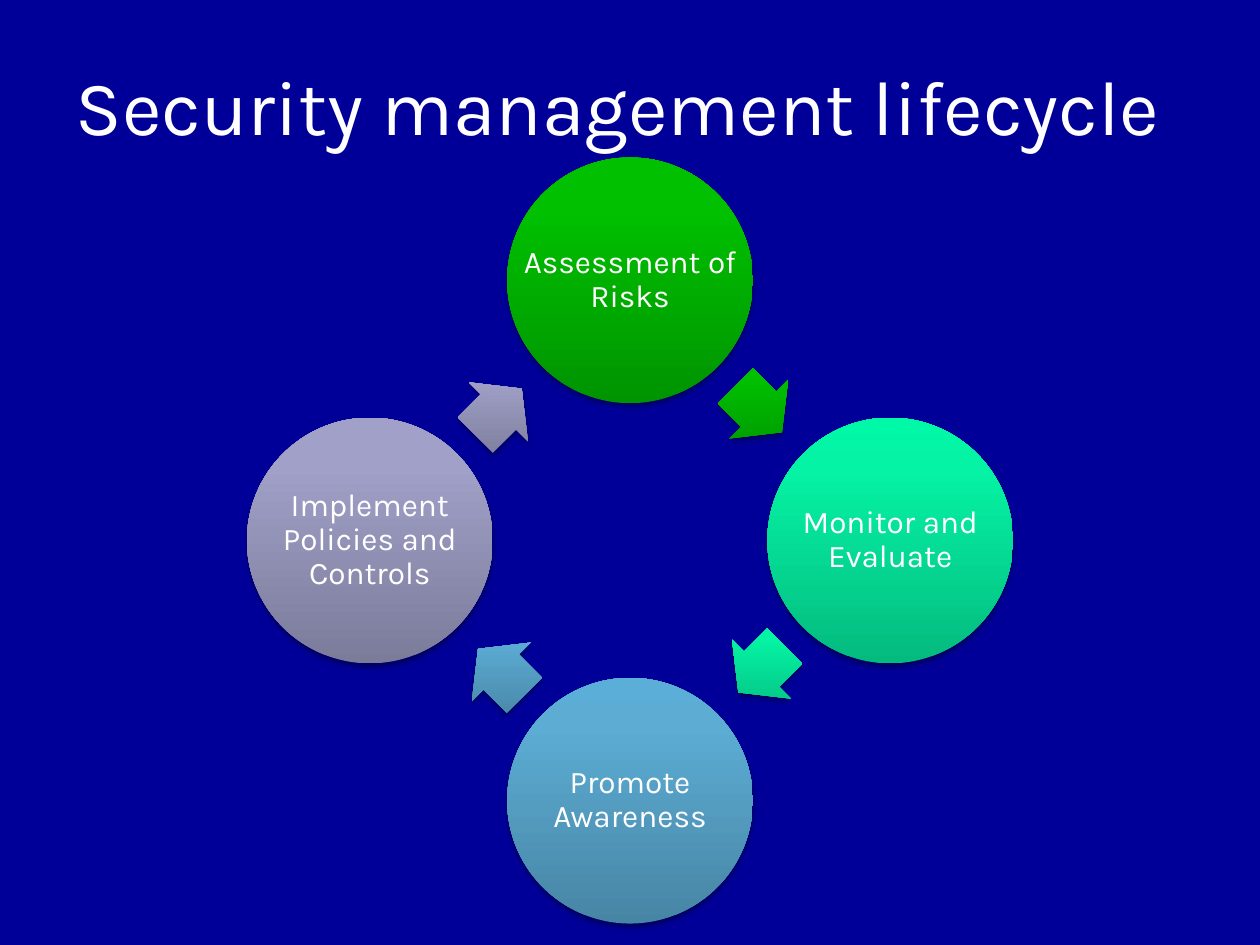
import math

from lxml import etree
from pptx import Presentation
from pptx.dml.color import RGBColor
from pptx.enum import shapes, text
from pptx.oxml import parse_xml
from pptx.oxml.ns import qn
from pptx.util import Inches, Pt

FONT = "Karla"
NAVY = RGBColor(0x00, 0x00, 0x99)
WHITE = RGBColor(0xFF, 0xFF, 0xFF)
BLACK = RGBColor(0x00, 0x00, 0x00)
GREEN = [RGBColor(0x00, 0x94, 0x00), RGBColor(0x00, 0xC0, 0x00), RGBColor(0x00, 0xC1, 0x00)]
MINT = [RGBColor(0x04, 0xBB, 0x7E), RGBColor(0x05, 0xF3, 0xA4), RGBColor(0x00, 0xF9, 0xA6)]
BLUE = [RGBColor(0x47, 0x85, 0xA4), RGBColor(0x5C, 0xAC, 0xD4), RGBColor(0x5A, 0xAE, 0xD8)]
LILAC = [RGBColor(0x7B, 0x7B, 0x9A), RGBColor(0xA0, 0xA0, 0xC8), RGBColor(0xA0, 0xA0, 0xCA)]
STAGES = [
    ("Assessment of Risks", GREEN),
    ("Monitor and Evaluate", MINT),
    ("Promote Awareness", BLUE),
    ("Implement Policies and Controls", LILAC),
]
DRAWING = "http://schemas.openxmlformats.org/drawingml/2006/main"
DIAMETER = 1.95
ARROW_WIDTH, ARROW_HEIGHT = 0.52, 0.66
ARROW_LAG = 0.6  # degrees each arrow sits behind the middle of its gap


def centred_box(x, y, width, height):
    return [Inches(value) for value in (x - width / 2, y - height / 2, width, height)]


def on_ring(center, radius, degrees):
    """Point on the ring, measured clockwise from the top."""
    angle = math.radians(degrees)
    return center[0] + radius * math.sin(angle), center[1] - radius * math.cos(angle)


def style_solid(shape, colors):
    """Give a shape an upright gradient, no outline and a soft shadow."""
    shape.fill.background()
    shape.line.fill.background()
    stops = "".join(
        f'<a:gs pos="{position}"><a:srgbClr val="{color}"/></a:gs>'
        for position, color in zip((0, 80000, 100000), colors)
    )
    gradient = parse_xml(
        f'<a:gradFill xmlns:a="{DRAWING}" rotWithShape="0"><a:gsLst>{stops}</a:gsLst>'
        '<a:lin ang="16200000" scaled="0"/></a:gradFill>'
    )
    properties = shape._element.spPr
    properties.replace(properties.find(qn("a:noFill")), gradient)
    shape.shadow.inherit = False
    shadow = etree.SubElement(
        properties.find(qn("a:effectLst")), qn("a:outerShdw"),
        blurRad="40000", dist="23000", dir="5400000", rotWithShape="0",
    )
    color = etree.SubElement(shadow, qn("a:srgbClr"), val=str(BLACK))
    etree.SubElement(color, qn("a:alpha"), val="35000")


def set_font(para, size):
    for span in para.runs:
        span.font.name = FONT
        span.font.size = Pt(size)
        span.font.color.rgb = WHITE


def add_stage(group, center, label, colors):
    box = centred_box(*center, DIAMETER, DIAMETER)
    circle = group.shapes.add_shape(shapes.MSO_SHAPE.OVAL, *box)
    style_solid(circle, colors)
    frame = group.shapes.add_textbox(*box).text_frame
    frame.word_wrap = True
    frame.vertical_anchor = text.MSO_ANCHOR.MIDDLE
    frame.margin_left = frame.margin_right = Inches(0.03)
    frame.margin_top = frame.margin_bottom = Inches(0.03)
    frame.text = label
    para = frame.paragraphs[0]
    para.alignment = text.PP_ALIGN.CENTER
    para.line_spacing = 0.9
    set_font(para, 18)


def add_arrow(group, center, rotation, colors):
    box = centred_box(*center, ARROW_WIDTH, ARROW_HEIGHT)
    arrow = group.shapes.add_shape(shapes.MSO_SHAPE.RIGHT_ARROW, *box)
    arrow.adjustments[0] = 0.6
    arrow.adjustments[1] = 0.5
    arrow.rotation = rotation
    style_solid(arrow, colors)


def add_cycle(page, left, top, size):
    group = page.shapes.add_group_shape()
    center = left + size / 2, top + size / 2
    radius = (size - DIAMETER) / 2
    step = 360 / len(STAGES)
    for index, (label, colors) in enumerate(STAGES):
        angle = index * step
        add_stage(group, on_ring(center, radius, angle), label, colors)
        middle = angle + step / 2
        arrow_radius = radius * math.cos(math.radians(step / 2))
        arrow_center = on_ring(center, arrow_radius, middle - ARROW_LAG)
        add_arrow(group, arrow_center, middle, colors)


def add_title(page, left, top, width, height):
    title = page.shapes.title
    title.left, title.top = Inches(left), Inches(top)
    title.width, title.height = Inches(width), Inches(height)
    frame = title.text_frame
    frame.vertical_anchor = text.MSO_ANCHOR.MIDDLE
    frame.text = "Security management lifecycle"
    para = frame.paragraphs[0]
    para.alignment = text.PP_ALIGN.LEFT
    set_font(para, 44)


def main():
    deck = Presentation()
    deck.slide_width, deck.slide_height = Inches(10), Inches(7.5)
    page = deck.slides.add_slide(deck.slide_layouts.get_by_name("Title Only"))
    page.background.fill.solid()
    page.background.fill.fore_color.rgb = NAVY
    add_title(page, 0.5, 0.08, 9, 1.51)
    add_cycle(page, 1.96, 1.25, 6.08)
    deck.save("out.pptx")


if __name__ == "__main__":
    main()
